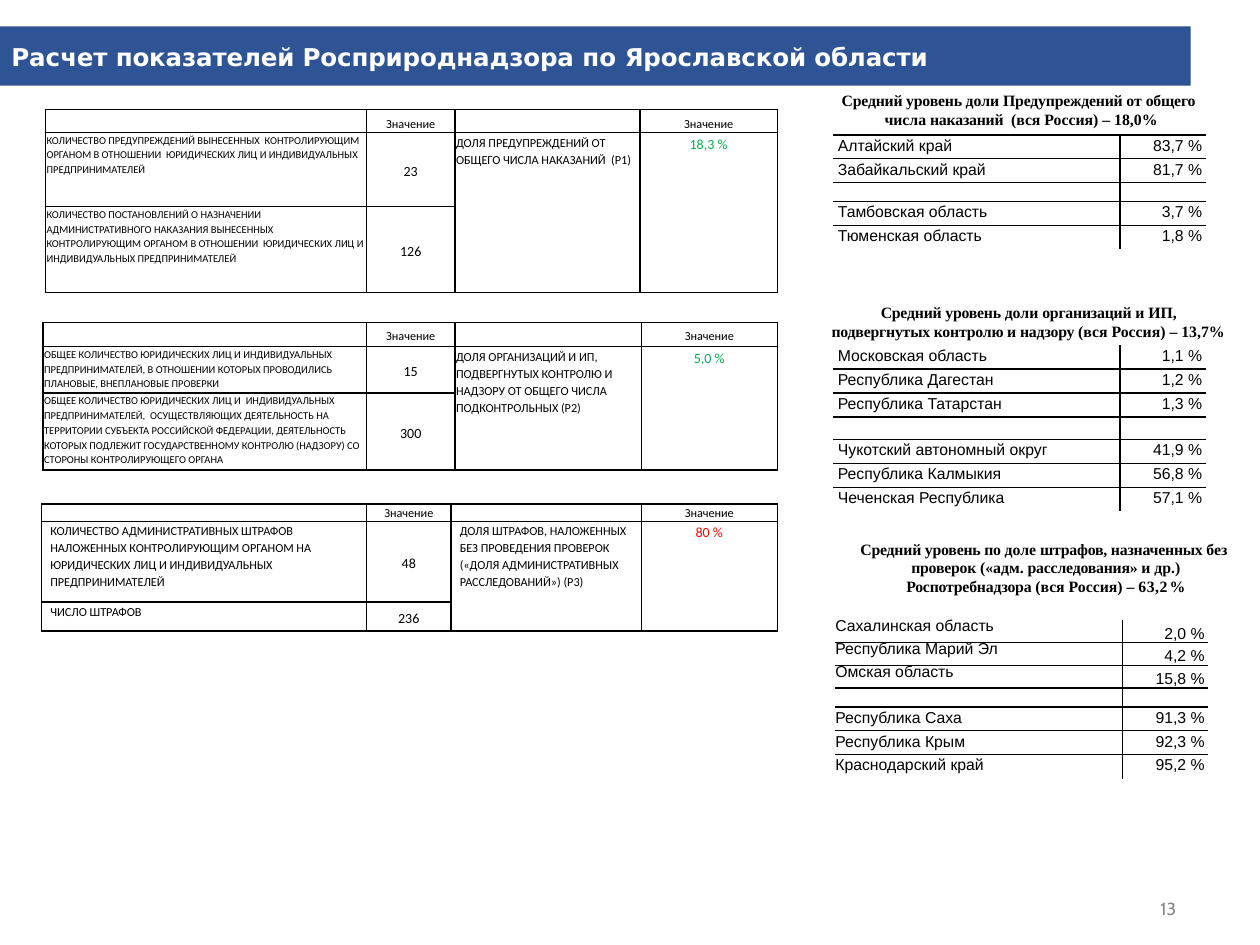
from lxml.etree import SubElement
from pptx import Presentation
from pptx.dml.color import RGBColor
from pptx.enum.text import MSO_ANCHOR as ANCHOR, PP_ALIGN as ALIGN
from pptx.enum.shapes import MSO_SHAPE
from pptx.oxml import parse_xml
from pptx.oxml.ns import nsdecls, qn
from pptx.util import Inches, Pt

BLUE = RGBColor(0x2E, 0x54, 0x96)
WHITE = RGBColor(0xFF, 0xFF, 0xFF)
BLACK = RGBColor(0, 0, 0)
GREEN = RGBColor(0, 0xB0, 0x50)
RED = RGBColor(0xFF, 0, 0)
GRAY = RGBColor(0x88, 0x88, 0x88)
TIGHT = -10

TITLE = [("Ра", TIGHT), ("с", 0), ("чет показателей Росприроднадзора ", TIGHT),
         ("по ", 0), ("Ярославской области", TIGHT)]

INDICATORS = [
    dict(at=(0.36, 0.87), cols=(2.55, 0.7, 1.47, 1.09), rows=(0.18, 0.59, 0.68),
         counts=[("КОЛИЧЕСТВО ПРЕДУПРЕЖДЕНИЙ ВЫНЕСЕННЫХ  КОНТРОЛИРУЮЩИМ ОРГАНОМ В ОТНОШЕНИИ  "
                  "ЮРИДИЧЕСКИХ ЛИЦ И ИНДИВИДУАЛЬНЫХ ПРЕДПРИНИМАТЕЛЕЙ", "23"),
                 ("КОЛИЧЕСТВО ПОСТАНОВЛЕНИЙ О НАЗНАЧЕНИИ  АДМИНИСТРАТИВНОГО НАКАЗАНИЯ ВЫНЕСЕННЫХ  "
                  "КОНТРОЛИРУЮЩИМ ОРГАНОМ В ОТНОШЕНИИ  ЮРИДИЧЕСКИХ ЛИЦ И ИНДИВИДУАЛЬНЫХ "
                  "ПРЕДПРИНИМАТЕЛЕЙ", "126")],
         share="ДОЛЯ ПРЕДУПРЕЖДЕНИЙ ОТ  ОБЩЕГО ЧИСЛА НАКАЗАНИЙ  (P1)",
         result="18,3 %", color=GREEN, size=6, side=0.01, head_top=0.04, top=0.01),
    dict(at=(0.34, 2.56), cols=(2.57, 0.7, 1.48, 1.08), rows=(0.19, 0.37, 0.61),
         counts=[("ОБЩЕЕ КОЛИЧЕСТВО ЮРИДИЧЕСКИХ ЛИЦ И ИНДИВИДУАЛЬНЫХ ПРЕДПРИНИМАТЕЛЕЙ, "
                  "В ОТНОШЕНИИ КОТОРЫХ ПРОВОДИЛИСЬ ПЛАНОВЫЕ, ВНЕПЛАНОВЫЕ ПРОВЕРКИ", "15"),
                 ("ОБЩЕЕ КОЛИЧЕСТВО ЮРИДИЧЕСКИХ ЛИЦ И  ИНДИВИДУАЛЬНЫХ ПРЕДПРИНИМАТЕЛЕЙ,  "
                  "ОСУЩЕСТВЛЯЮЩИХ ДЕЯТЕЛЬНОСТЬ НА ТЕРРИТОРИИ СУБЪЕКТА РОССИЙСКОЙ ФЕДЕРАЦИИ, "
                  "ДЕЯТЕЛЬНОСТЬ КОТОРЫХ ПОДЛЕЖИТ ГОСУДАРСТВЕННОМУ КОНТРОЛЮ (НАДЗОРУ) СО "
                  "СТОРОНЫ КОНТРОЛИРУЮЩЕГО ОРГАНА", "300")],
         share="ДОЛЯ ОРГАНИЗАЦИЙ И ИП,  ПОДВЕРГНУТЫХ КОНТРОЛЮ И  НАДЗОРУ ОТ ОБЩЕГО ЧИСЛА "
               "ПОДКОНТРОЛЬНЫХ (P2)",
         result="5,0 %", color=GREEN, size=6, side=0.01, head_top=0.03, top=0.01),
    dict(at=(0.33, 4), cols=(2.58, 0.67, 1.51, 1.08), rows=(0.14, 0.64, 0.23),
         counts=[("КОЛИЧЕСТВО АДМИНИСТРАТИВНЫХ ШТРАФОВ\nНАЛОЖЕННЫХ КОНТРОЛИРУЮЩИМ ОРГАНОМ НА "
                  "ЮРИДИЧЕСКИХ ЛИЦ И ИНДИВИДУАЛЬНЫХ ПРЕДПРИНИМАТЕЛЕЙ", "48"),
                 ("ЧИСЛО ШТРАФОВ", "236")],
         share="ДОЛЯ ШТРАФОВ, НАЛОЖЕННЫХ БЕЗ ПРОВЕДЕНИЯ ПРОВЕРОК («ДОЛЯ АДМИНИСТРАТИВНЫХ\n"
               "РАССЛЕДОВАНИЙ») (P3)",
         result="80 %", color=RED, size=7, side=0.07, head_top=0, top=0),
]

REGION_COLS = (2.28, 0.68)
REGIONS = [
    dict(at=(6.61, 1.07), rows=(0.19, 0.19, 0.15, 0.19, 0.19), indent=0.04, top_line=True, loose=0,
         data=[("Алтайский край", "83,7 %"), ("Забайкальский край", "81,7 %"), ("", ""),
               ("Тамбовская область", "3,7 %"), ("Тюменская область", "1,8 %")]),
    dict(at=(6.61, 2.74), rows=(0.19, 0.19, 0.19, 0.18, 0.19, 0.19, 0.19), indent=0.04,
         top_line=False, loose=0,
         data=[("Московская область", "1,1 %"), ("Республика Дагестан", "1,2 %"),
               ("Республика Татарстан", "1,3 %"), ("", ""), ("Чукотский автономный округ", "41,9 %"),
               ("Республика Калмыкия", "56,8 %"), ("Чеченская Республика", "57,1 %")]),
    dict(at=(6.63, 4.92), rows=(0.18, 0.18, 0.18, 0.15, 0.19, 0.19, 0.19), indent=0,
         top_line=False, loose=3,
         data=[("Сахалинская область", "2,0 %"), ("Республика Марий Эл", "4,2 %"),
               ("Омская область", "15,8 %"), ("", ""), ("Республика Саха", "91,3 %"),
               ("Республика Крым", "92,3 %"), ("Краснодарский край", "95,2 %")]),
]

HEADINGS = [
    ((6.67, 0.71, 2.89, 0.33), (0.35, -0.34), None,
     [[("Средний уровень ", TIGHT), ("доли ", 0), ("Предупреждений ", TIGHT), ("от ", 0),
       ("общего  ", TIGHT), ("числа ", 0), ("наказаний  ", TIGHT), ("(вся Россия) – 18,0%", 0)]]),
    ((6.59, 2.39, 3.19, 0.33), (0.01, 0.39), None,
     [[("Средний уровень ", TIGHT), ("доли ", 0), ("организаций ", TIGHT), ("и ИП,  ", 0),
       ("подвергнутых контролю ", TIGHT), ("и ", 0), ("надзору ", TIGHT),
       ("(вся Россия) – 13,7%", 0)]]),
    ((6.79, 4.27, 3.01, 0.48), (0.01, 0), ALIGN.CENTER,
     [[("Средний уровень по ", TIGHT), ("доле ", 0), ("штрафов, назначенных ", TIGHT),
       ("без  ", 0), ("проверок ", TIGHT), ("(«адм. ", 0), ("расследования» ", TIGHT),
       ("и др.)", 0)],
      [("Роспотребнадзора ", TIGHT), ("(вся Россия) – ", 0), ("6 3 , 2 ", -100), ("%", 0)]]),
]


def add_run(p, text, size, font, color, bold=False, spacing=0):
    r = p.add_run()
    r.text = text
    r.font.size, r.font.name, r.font.bold = Pt(size), font, bold
    r.font.color.rgb = color
    if spacing:
        r._r.get_or_add_rPr().set("spc", str(spacing))


def indent(p, left, first=0):
    pPr = p._p.get_or_add_pPr()
    pPr.set("marL", str(Inches(left)))
    pPr.set("indent", str(Inches(first)))


def add_text(s, box, paragraphs, size, font, color, bold=False, ind=(0, 0), align=None,
             before=0, top=0.01, line=None):
    tf = s.shapes.add_textbox(*map(Inches, box)).text_frame
    tf.word_wrap = True
    tf.margin_left = tf.margin_right = tf.margin_bottom = 0
    tf.margin_top = Inches(top)
    for i, runs in enumerate(paragraphs):
        p = tf.add_paragraph() if i else tf.paragraphs[0]
        indent(p, *ind)
        p.alignment, p.line_spacing = align, line
        p.space_before = Pt(0 if i else before)
        for text, spacing in runs:
            add_run(p, text, size, font, color, bold, spacing)


def add_grid(s, at, cols, rows, has_line):
    size = Inches(sum(cols)), Inches(sum(rows))
    tbl = s.shapes.add_table(len(rows), len(cols), *map(Inches, at), *size).table
    tbl.first_row = tbl.horz_banding = False
    for col, width in zip(tbl.columns, cols):
        col.width = Inches(width)
    for i, height in enumerate(rows):
        tbl.rows[i].height = Inches(height)
        for j in range(len(cols)):
            cell = tbl.cell(i, j)
            cell.fill.background()
            cell.margin_left = cell.margin_right = cell.margin_top = cell.margin_bottom = 0
            SubElement(cell.text_frame.paragraphs[0]._p, qn("a:endParaRPr")).set("sz", "600")
            for k, side in enumerate("LRTB"):
                paint = '<a:solidFill><a:srgbClr val="000000"/></a:solidFill>'
                if not has_line(i, j, side):
                    paint = "<a:noFill/>"
                cell._tc.get_or_add_tcPr().insert(k, parse_xml(
                    f'<a:ln{side} {nsdecls("a")} w="12700">{paint}</a:ln{side}>'))
    return tbl


def fill_cell(cell, text, size, font, align=None, color=BLACK, line=1.15, after=10,
              top=0, side=0, anchor=ANCHOR.TOP):
    cell.margin_top, cell.vertical_anchor = Inches(top), anchor
    cell.margin_left = cell.margin_right = Inches(side)
    parts = text.split("\n")
    for i, part in enumerate(parts):
        p = cell.text_frame.add_paragraph() if i else cell.text_frame.paragraphs[0]
        p.alignment, p.line_spacing = align, line
        p.space_after = Pt(after if i == len(parts) - 1 else 0)
        add_run(p, part, size, font, color)


def add_indicator(s, d):
    tbl = add_grid(s, d["at"], d["cols"], d["rows"], lambda i, j, side: True)
    side, top = d["side"], d["top"]
    for j in (1, 3):
        fill_cell(tbl.cell(0, j), "Значение", 7, "Calibri", ALIGN.CENTER,
                  top=d["head_top"], side=side)
    for i, (label, value) in enumerate(d["counts"], 1):
        fill_cell(tbl.cell(i, 0), label, d["size"], "Calibri", side=side)
        fill_cell(tbl.cell(i, 1), value, 8, "Calibri", ALIGN.CENTER,
                  top=0.01, side=0.01, anchor=ANCHOR.MIDDLE)
    for j in (2, 3):
        tbl.cell(1, j).merge(tbl.cell(2, j))
    fill_cell(tbl.cell(1, 2), d["share"], 7, "Calibri", top=top, side=side)
    fill_cell(tbl.cell(1, 3), d["result"], 8, "Calibri", ALIGN.CENTER, d["color"],
              top=top, side=side)


def add_regions(s, d):
    last = len(d["rows"]) - 1

    def has_line(i, j, side):
        return {"L": j == 1, "R": j == 0, "T": i > 0 or d["top_line"], "B": i < last}[side]

    tbl = add_grid(s, d["at"], REGION_COLS, d["rows"], has_line)
    for i, (name, value) in enumerate(d["data"]):
        if not name:
            continue
        loose = i < d["loose"]
        fill_cell(tbl.cell(i, 0), name, 9, "Arial", line=Pt(8.8), after=0,
                  anchor=ANCHOR.TOP if loose else ANCHOR.MIDDLE)
        indent(tbl.cell(i, 0).text_frame.paragraphs[0], d["indent"])
        fill_cell(tbl.cell(i, 1), value, 9, "Arial", ALIGN.RIGHT, line=Pt(8.8), after=0,
                  side=0.03, anchor=ANCHOR.BOTTOM if loose else ANCHOR.MIDDLE)


def main():
    prs = Presentation()
    prs.slide_width, prs.slide_height = Inches(10), Inches(7.5)
    s = prs.slides.add_slide(prs.slide_layouts[6])
    band = s.shapes.add_shape(MSO_SHAPE.RECTANGLE, *map(Inches, (0, 0.21, 9.45, 0.47)))
    band.shadow.inherit = False
    band.fill.solid()
    band.fill.fore_color.rgb = BLUE
    band.line.fill.background()
    add_text(s, (0.08, 0.32, 9.39, 0.25), [TITLE], 14, "DejaVu Sans", WHITE, True,
             (0.01, 0), before=0.9)
    add_text(s, (9.17, 7.15, 0.23, 0.17), [[("13", 0)]], 10, "Cabin", GRAY,
             ind=(0.04, 0), top=0, line=Pt(10.5))
    for d in INDICATORS:
        add_indicator(s, d)
    for d in REGIONS:
        add_regions(s, d)
    for box, ind, align, paragraphs in HEADINGS:
        add_text(s, box, paragraphs, 9, "Times New Roman", BLACK, True, ind, align, 1)
    prs.save("out.pptx")


if __name__ == "__main__":
    main()
